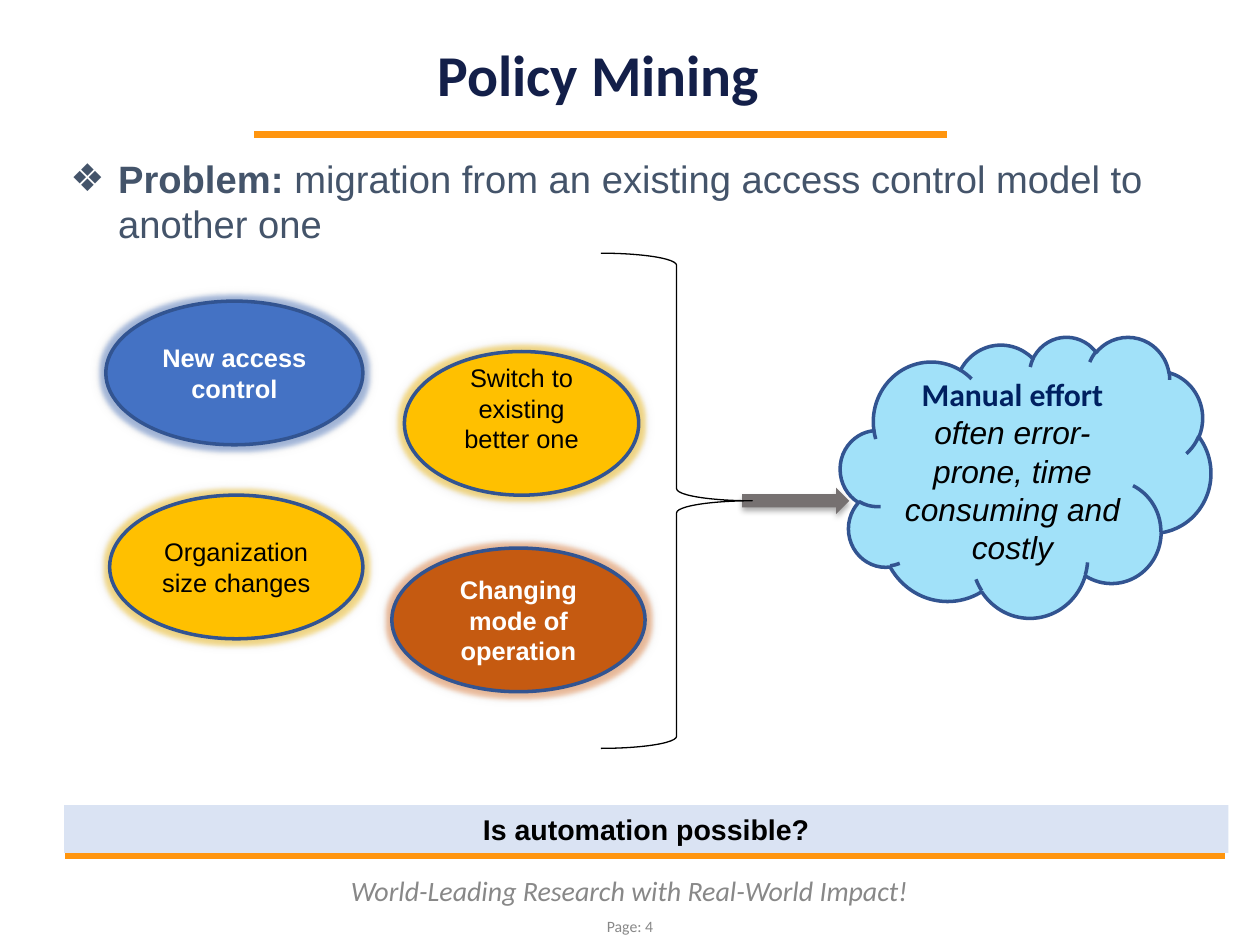
from lxml.etree import SubElement
from pptx import Presentation
from pptx.dml.color import RGBColor
from pptx.enum.shapes import MSO_CONNECTOR, MSO_SHAPE
from pptx.enum.text import MSO_ANCHOR, PP_ALIGN
from pptx.oxml.ns import qn
from pptx.util import Inches, Pt

WIDE, HIGH = Inches(10), Inches(7.5)
BLACK = RGBColor(0x00, 0x00, 0x00)
WHITE = RGBColor(0xFF, 0xFF, 0xFF)
GRAY = RGBColor(0x88, 0x88, 0x88)
STEEL = RGBColor(0x76, 0x71, 0x71)
SLATE = RGBColor(0x44, 0x54, 0x6A)
NAVY = RGBColor(0x13, 0x1F, 0x49)
DEEP = RGBColor(0x00, 0x20, 0x60)
EDGE = RGBColor(0x32, 0x54, 0x91)
BLUE = RGBColor(0x44, 0x72, 0xC4)
SKY = RGBColor(0x00, 0xB0, 0xF0)
PALE = RGBColor(0xDA, 0xE3, 0xF3)
GOLD = RGBColor(0xFF, 0xC0, 0x00)
RUST = RGBColor(0xC5, 0x5A, 0x11)
PEACH = RGBColor(0xED, 0x7D, 0x31)
ORANGE = RGBColor(0xFF, 0x95, 0x0E)


def place(left, top, wide, high):
    return [int(size * part / 100) for size, part in
            zip((WIDE, HIGH, WIDE, HIGH), (left, top, wide, high))]


def style(font, size, color, bold=False, italic=False, name="Arial"):
    font.size, font.name = Pt(size), name
    font.bold, font.italic = bold, italic
    font.color.rgb = color


def write(shape, text, *look, first=True, **more):
    frame = shape.text_frame
    frame.word_wrap = True
    frame.vertical_anchor = MSO_ANCHOR.MIDDLE
    para = frame.paragraphs[0] if first else frame.add_paragraph()
    para.text = text
    para.alignment = PP_ALIGN.CENTER
    style(para.font, *look, **more)


def label(slide, spot, text, *look, **more):
    box = slide.shapes.add_textbox(*place(*spot))
    write(box, text, *look, **more)
    return box


def rule(slide, left, right, top):
    start, level, span, _ = place(left, top, right - left, 0)
    line = slide.shapes.add_connector(
        MSO_CONNECTOR.STRAIGHT, start, level, start + span, level)
    line.line.color.rgb = ORANGE
    line.line.width = Pt(4)
    SubElement(line._element.spPr, qn("a:effectLst"))


def shape(slide, kind, spot, fill=None, edge=None, weight=2):
    form = slide.shapes.add_shape(kind, *place(*spot))
    form.shadow.inherit = False
    if fill is None:
        form.fill.background()
    else:
        form.fill.solid()
        form.fill.fore_color.rgb = fill
    if edge is None:
        form.line.fill.background()
    else:
        form.line.color.rgb = edge
        form.line.width = Pt(weight)
    return form


def effect(form, kind, color, alpha, **traits):
    effects = form._element.spPr.find(qn("a:effectLst"))
    node = SubElement(effects, qn(kind), {k: str(v) for k, v in traits.items()})
    tint = SubElement(node, qn("a:srgbClr"), val=str(color))
    SubElement(tint, qn("a:alpha"), val=str(alpha * 1000))


def oval(slide, spot, text, fill, glow, color, bold):
    form = shape(slide, MSO_SHAPE.OVAL, spot, fill, EDGE)
    effect(form, "a:glow", glow, 40, rad=Pt(5))
    effect(form, "a:outerShdw", BLACK, 20, blurRad=Pt(6), dist=0, dir=18900000)
    write(form, text, 14.5, color, bold)
    return form


def problem(slide):
    box = slide.shapes.add_textbox(*place(4.6, 15.73, 90.7, 11.07))
    box.text_frame.word_wrap = True
    para = box.text_frame.paragraphs[0]
    props = para._p.get_or_add_pPr()
    props.set("marL", str(Inches(0.38)))
    props.set("indent", str(-Inches(0.38)))
    SubElement(props, qn("a:buFont"), typeface="Arial")
    SubElement(props, qn("a:buChar"), char="❖")
    for text, bold in (
            ("Problem: ", True),
            ("migration from an existing access control model to another one", False)):
        run = para.add_run()
        run.text = text
        style(run.font, 21.8, SLATE, bold)


def cloud(slide):
    form = shape(slide, MSO_SHAPE.CLOUD, (66.7, 35.6, 29.4, 29.73), SKY, EDGE)
    tint = form._element.spPr.find(qn("a:solidFill"))[0]
    SubElement(tint, qn("a:alpha"), val="37000")
    write(form, "Manual effort", 18.1, DEEP, True, name="Calibri")
    write(form, "often error-prone, time consuming and costly",
          18.1, BLACK, italic=True, first=False)


def main():
    deck = Presentation()
    deck.slide_width, deck.slide_height = WIDE, HIGH
    slide = deck.slides.add_slide(deck.slide_layouts[6])

    rule(slide, 20.2, 75.2, 14.27)
    rule(slide, 5.2, 97.2, 90.53)
    label(slide, (25.8, 91.87, 48.3, 4.8),
          "World-Leading Research with Real-World Impact!",
          16, GRAY, italic=True, name="Calibri")
    label(slide, (40.6, 95.6, 18.8, 4.8), "Page: 4", 9, GRAY, name="Calibri")
    problem(slide)
    title = label(slide, (21.7, 3.2, 51.6, 9.07), "Policy Mining",
                  33, NAVY, True, name="Calibri").text_frame
    title.margin_left = title.margin_right = 0
    title.margin_top = title.margin_bottom = 0

    oval(slide, (8.4, 31.87, 20.4, 15.2), "New access control",
         BLUE, BLUE, WHITE, True)
    oval(slide, (31.1, 58, 20.1, 15.2), "Changing mode of operation",
         RUST, PEACH, WHITE, True)
    oval(slide, (8.7, 52.4, 20.1, 15.2), "Organization size changes",
         GOLD, GOLD, BLACK, False)
    cloud(slide)
    arrow = shape(slide, MSO_SHAPE.RIGHT_ARROW, (58.9, 51.6, 8.5, 2.8), STEEL)
    effect(arrow, "a:outerShdw", BLACK, 32,
           blurRad=Pt(3.5), dist=Pt(2.2), dir=5400000)
    switch = oval(slide, (32.1, 37.2, 18.6, 15.2), "Switch to existing better one",
                  GOLD, GOLD, BLACK, False)
    switch.text_frame.margin_top = 0
    switch.text_frame.margin_bottom = Inches(0.24)
    brace = shape(slide, MSO_SHAPE.RIGHT_BRACE, (47.7, 26.8, 12, 52.4),
                  edge=BLACK, weight=0.75)
    brace.adjustments[0] = 0.08
    banner = shape(slide, MSO_SHAPE.RECTANGLE, (5.1, 85.2, 92.4, 5.07), PALE)
    write(banner, "Is automation possible?", 16.3, BLACK, True)

    deck.save("out.pptx")


if __name__ == "__main__":
    main()
